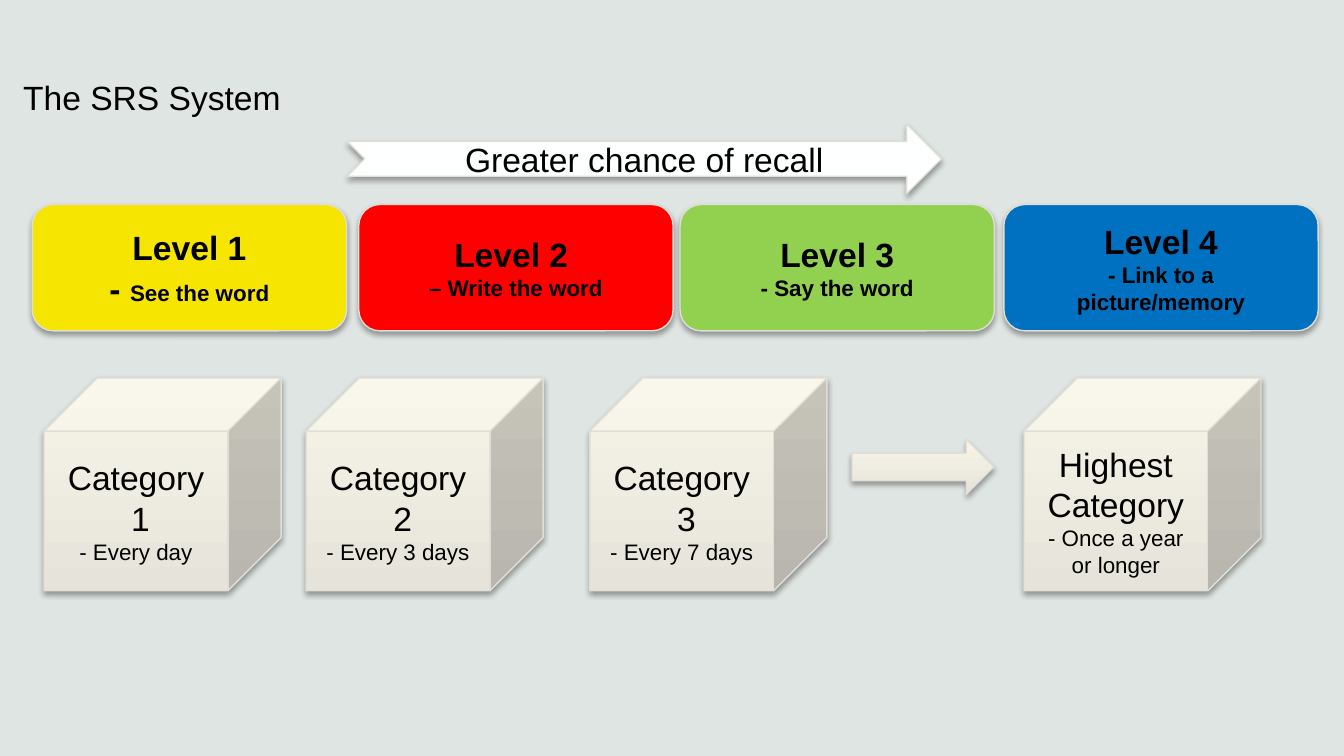
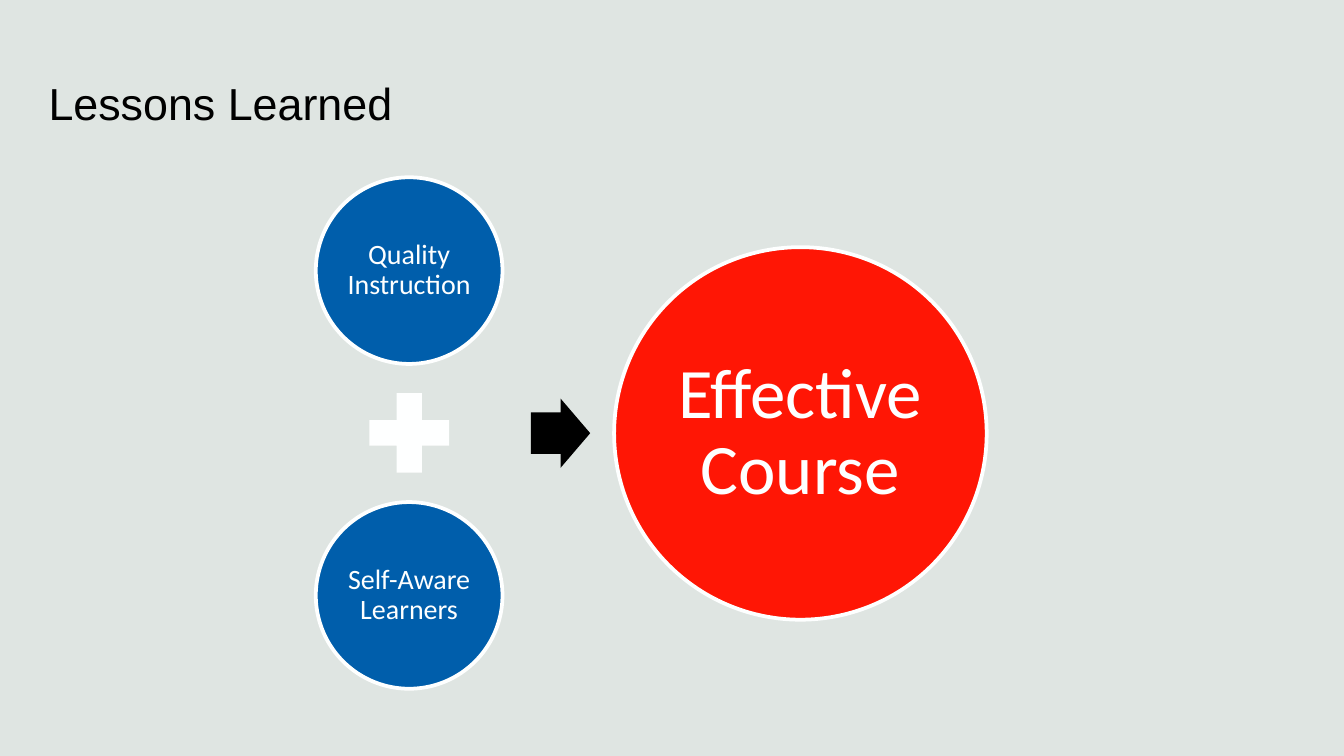
from lxml import etree
from pptx import Presentation
from pptx import util as u
from pptx.dml.color import RGBColor
from pptx.enum import shapes, text
from pptx.oxml import ns

PAGE = RGBColor(0xDF, 0xE5, 0xE2)
BLACK = RGBColor(0x00, 0x00, 0x00)
WHITE = RGBColor(0xFE, 0xFF, 0xFF)
EDGE = RGBColor(0xE0, 0xDE, 0xD6)
STONE = RGBColor(0xE6, 0xE4, 0xDA)
CREAM = RGBColor(0xF8, 0xF5, 0xE8)
YELLOW = RGBColor(0xF5, 0xE5, 0x00)
RED = RGBColor(0xFF, 0x00, 0x00)
GREEN = RGBColor(0x92, 0xD0, 0x50)
BLUE = RGBColor(0x00, 0x70, 0xC0)
NAVY = RGBColor(0x00, 0x5E, 0xAB)
SCARLET = RGBColor(0xFF, 0x16, 0x05)

KIND = shapes.MSO_SHAPE
LARGE, SMALL = 18, 12


class Painter:
    """Holds the shared style and the slide being filled."""

    def __init__(self):
        self.deck = Presentation()
        self.deck.slide_width, self.deck.slide_height = u.Pt(720), u.Pt(405)
        self.page = None

    def new_page(self):
        self.page = self.deck.slides.add_slide(self.deck.slide_layouts[6])
        fill = self.page.background.fill
        fill.solid()
        fill.fore_color.rgb = PAGE

    def label(self, box, paras, inset=None, centred=True, spacing=None, **style):
        """Each paragraph is a list of (words, size) spans."""
        frame = box.text_frame
        frame.word_wrap = True
        frame.vertical_anchor = text.MSO_ANCHOR.MIDDLE
        if inset is not None:
            for side in ("left", "top", "right", "bottom"):
                setattr(frame, f"margin_{side}", u.Pt(inset))
        for number, spans in enumerate(paras):
            para = frame.add_paragraph() if number else frame.paragraphs[0]
            para.alignment = text.PP_ALIGN.CENTER if centred else text.PP_ALIGN.LEFT
            if spacing:
                para.line_spacing = spacing
            for words, size in spans:
                span = para.add_run()
                span.text = words
                look = {"name": "Arial", "size": u.Pt(size), **style}
                color = look.pop("color", BLACK)
                for key, value in look.items():
                    setattr(span.font, key, value)
                span.font.color.rgb = color

    def title(self, words, left, top, width, size):
        box = self.page.shapes.add_textbox(*map(u.Pt, (left, top, width, 28.8)))
        self.label(box, [[(words, size)]], inset=0, centred=False)

    def shape(self, kind, place, color, edge=None, weight=0.75):
        """A preset shape; a pair of colours gives a bottom-to-top gradient."""
        box = self.page.shapes.add_shape(kind, *map(u.Pt, place))
        box.shadow.inherit = False
        if isinstance(color, RGBColor):
            box.fill.solid()
            box.fill.fore_color.rgb = color
        else:
            box.fill.gradient()
            box.fill.gradient_angle = 90
            for position, (stop, shade) in enumerate(zip(box.fill.gradient_stops, color)):
                stop.color.rgb = shade
                stop.position = position
        if edge is None:
            box.line.fill.background()
        else:
            box.line.color.rgb = edge
            box.line.width = u.Pt(weight)
        return box

    def raised(self, kind, place, color, paras=(), **style):
        """A shape with the soft shadow below it."""
        box = self.shape(kind, place, color, EDGE)
        effects = box._element.spPr.find(ns.qn("a:effectLst"))
        shadow = etree.SubElement(
            effects, ns.qn("a:outerShdw"), blurRad=str(u.Pt(3.1)),
            dist=str(u.Pt(1.8)), dir="5400000", rotWithShape="0")
        shade = etree.SubElement(shadow, ns.qn("a:srgbClr"), val=str(BLACK))
        etree.SubElement(shade, ns.qn("a:alpha"), val="35000")
        if paras:
            self.label(box, paras, **style)

    def circle(self, left, top, size, color, words, font_size, inset):
        box = self.shape(KIND.OVAL, (left, top, size, size), color, WHITE, 2)
        self.label(box, [[(words, font_size)]], inset=inset, spacing=0.9,
                   name="Calibri", color=WHITE)


def srs_system(painter):
    painter.new_page()
    painter.title("The SRS System", 12.4, 37.4, 439, LARGE)

    # Review categories
    categories = [
        (23.6, ["Category", " 1"], "- Every day"),
        (164, ["Category", " 2"], "- Every 3 days"),
        (316, ["Category", " 3"], "- Every 7 days"),
        (548.6, ["Highest Category"], "- Once a year or longer"),
    ]
    for left, names, interval in categories:
        paras = [[(name, LARGE)] for name in names] + [[(interval, SMALL)]]
        painter.raised(KIND.CUBE, (left, 202.5, 127, 114), (STONE, CREAM), paras)
    painter.raised(KIND.RIGHT_ARROW, (456.4, 235.4, 76, 29.6), (STONE, CREAM))

    # Recall levels
    levels = [
        (17.3, YELLOW, "Level 1", [("- ", LARGE), ("See the word", SMALL)]),
        (192.2, RED, "Level 2 ", [("– Write the word", SMALL)]),
        (364.3, GREEN, "Level 3", [("- Say the word", SMALL)]),
        (537.8, BLUE, "Level 4", [("- Link to a picture/memory", SMALL)]),
    ]
    for left, color, name, task in levels:
        painter.raised(KIND.ROUNDED_RECTANGLE, (left, 109.6, 168.4, 67.7), color,
                       [[(name, LARGE)], task], bold=True)
    painter.raised(KIND.NOTCHED_RIGHT_ARROW, (186, 66.4, 318.4, 37.4), WHITE,
                   [[("Greater chance of recall", LARGE)]])


def lessons_learned(painter):
    painter.new_page()
    painter.title("Lessons Learned", 26, 40.3, 572.4, 24)

    # Two inputs lead to one result
    painter.circle(169.2, 95, 100, NAVY, "Quality Instruction", 15, 1.4)
    painter.shape(KIND.MATH_PLUS, (190.3, 203, 58, 58), WHITE)
    painter.circle(169.2, 269, 100, NAVY, "Self-Aware Learners", 15, 1.4)
    arrow = painter.shape(KIND.RIGHT_ARROW, (284.4, 213.5, 31.8, 37.2), BLACK)
    arrow.adjustments[0] = 0.6
    painter.circle(329, 132.4, 199.6, SCARLET, "Effective Course", 38, 3.6)


def main():
    painter = Painter()
    srs_system(painter)
    lessons_learned(painter)
    painter.deck.save("out.pptx")


if __name__ == "__main__":
    main()
